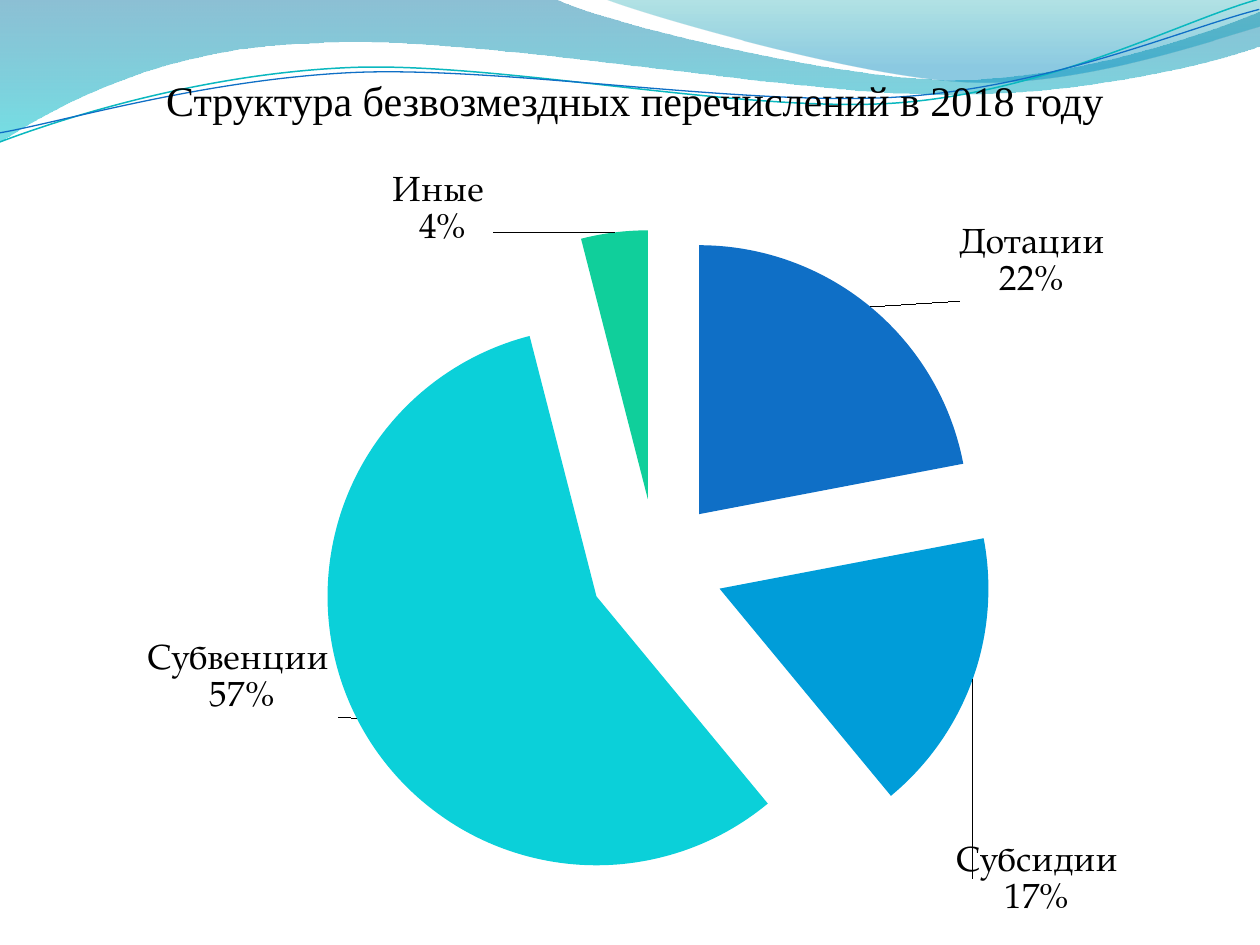
from math import cos, radians, sin

from lxml.etree import SubElement
from pptx import Presentation
from pptx.chart.data import CategoryChartData
from pptx.dml.color import RGBColor
from pptx.enum.chart import XL_CHART_TYPE
from pptx.enum.text import MSO_ANCHOR, PP_ALIGN
from pptx.oxml import parse_xml
from pptx.oxml.ns import nsdecls, qn
from pptx.util import Cm, Pt

TITLE = "Структура безвозмездных перечислений в 2018 году"

# Name, percent, colour, label shift as a fraction of the chart
SLICES = [
    ("Дотации", 22, "0F6FC6", (0.07, 0)),
    ("Субсидии", 17, "009DD9", (-0.02, 0.25)),
    ("Субвенции ", 57, "0BD0D9", (-0.01, -0.1)),
    ("Иные ", 4, "10CF9B", (-0.1, 0.03)),
]

# Outlines in cm: a pair is a straight step, six numbers are a Bezier step
WIDE_WAVE = [
    (0, 0), (11.18, -0.03),
    (12.09, 0.43, 16.87, 1.6, 19.25, 1.6),
    (21.67, 1.6, 24.33, 0.66, 25.4, 0.23),
    (25.43, 0.91),
    (24.97, 1.12, 22.1, 1.93, 18.95, 1.9),
    (15.8, 1.9, 9.7, 0.71, 6.53, 0.86),
    (3.28, 0.91, 1.17, 2.11, -0.03, 2.87),
    (0, 0),
]
RIGHT_WAVE = [
    (12.17, -0.03),
    (12.93, 0.28, 17.32, 1.57, 19.53, 1.65),
    (21.74, 1.75, 24.41, 0.81, 25.4, 0.53),
    (25.4, 0), (12.17, -0.03),
]
TEAL_LINE = [
    (0, 2.82),
    (1.22, 2.36, 4.01, 1.45, 7.04, 1.32),
    (10.03, 1.19, 15.06, 2.26, 18.11, 2.03),
    (21.16, 1.8, 23.83, 0.38, 25.35, -0.05),
]
BLUE_LINE = [
    (0, 2.64),
    (1.19, 2.44, 4.17, 1.55, 7.19, 1.42),
    (10.24, 1.3, 15.16, 2.13, 18.21, 1.91),
    (21.23, 1.7, 23.9, 0.53, 25.4, 0.15),
]


def rgb(value):
    return RGBColor.from_string(value)


def pairs(step):
    return list(zip(step[::2], step[1::2]))


def turn(outline, angle, cx, cy):
    """Turn every point of an outline clockwise about a centre."""
    c, s = cos(radians(angle)), sin(radians(angle))
    return [tuple(v for x, y in pairs(step)
                  for v in (cx + (x - cx) * c - (y - cy) * s,
                            cy + (x - cx) * s + (y - cy) * c))
            for step in outline]


class SlideBuilder:
    title_font = "Times New Roman"
    chart_font = "TeX Gyre Pagella"
    text_color = "000000"
    tilt = 2.7

    def __init__(self, prs):
        self.s = prs.slides.add_slide(prs.slide_layouts[6])

    def outline(self, outline, close):
        ends = [(Cm(x), Cm(y)) for *_, x, y in outline]
        builder = self.s.shapes.build_freeform(*ends[0])
        builder.add_line_segments(ends[1:], close=close)
        sp = builder.convert_to_shape()
        sp.shadow.inherit = False
        for line, step in zip(list(sp._element.iter(qn("a:lnTo"))), outline[1:]):
            if len(step) == 6:
                line.addprevious(self.bezier(step, sp.left, sp.top))
                line.getparent().remove(line)
        return sp

    def bezier(self, step, left, top):
        points = "".join(f'<a:pt x="{Cm(x) - left}" y="{Cm(y) - top}"/>'
                         for x, y in pairs(step))
        return parse_xml(f'<a:cubicBezTo {nsdecls("a")}>{points}</a:cubicBezTo>')

    def wave(self, outline, stops):
        """Add an area with a downward gradient; a stop is position, colour, opacity %."""
        sp = self.outline(outline, True)
        sp.line.fill.background()
        sp.fill.gradient()
        sp.fill.gradient_angle = 270
        for stop, (position, color, opacity) in zip(sp.fill.gradient_stops, stops):
            stop.position = position
            stop.color.rgb = rgb(color)
        colors = sp._element.spPr.iter(qn("a:srgbClr"))
        for element, (_, _, opacity) in zip(colors, stops):
            SubElement(element, qn("a:alpha"), val=str(opacity * 1000))

    def curve(self, outline, cx, cy, color, width):
        """Add a line that is laid out level and then tilted about its centre."""
        sp = self.outline(turn(outline, self.tilt, cx, cy), False)
        sp.rotation = 360 - self.tilt
        sp.left, sp.top = Cm(cx) - sp.width // 2, Cm(cy) - sp.height // 2
        sp.fill.background()
        sp.line.color.rgb = rgb(color)
        sp.line.width = Pt(width)

    def title(self, text, x, y, w, h):
        tf = self.s.shapes.add_textbox(Cm(x), Cm(y), Cm(w), Cm(h)).text_frame
        tf.word_wrap = True
        tf.vertical_anchor = MSO_ANCHOR.BOTTOM
        tf.margin_left = tf.margin_right = tf.margin_bottom = 0
        tf.text = text
        p = tf.paragraphs[0]
        p.alignment = PP_ALIGN.CENTER
        r = p.runs[0]
        r.font.name, r.font.size = self.title_font, Pt(24)
        r.font.color.rgb = rgb(self.text_color)

    def pie(self, slices, x, y, w, h):
        data = CategoryChartData(number_format="#,##0.0")
        data.categories = [name for name, *_ in slices]
        data.add_series("Series 1", [value for _, value, *_ in slices])
        chart = self.s.shapes.add_chart(
            XL_CHART_TYPE.PIE, Cm(x), Cm(y), Cm(w), Cm(h), data).chart
        chart.has_title = chart.has_legend = False
        chart.font.name, chart.font.size = self.chart_font, Pt(20)
        chart.font.color.rgb = rgb(self.text_color)
        plot = chart.plots[0]
        plot.vary_by_categories = True
        series = plot.series[0]
        for i, (_, _, color, _) in enumerate(slices):
            fill = series.points[i].format.fill
            fill.solid()
            fill.fore_color.rgb = rgb(color)
        explosion = parse_xml(f'<c:explosion {nsdecls("c")} val="25"/>')
        series._element.find(qn("c:dPt")).addprevious(explosion)
        labels = self.pie_labels([shift for *_, shift in slices])
        series._element.find(qn("c:cat")).addprevious(labels)
        self.place_plot(chart, 0.23, 0.12, 0.56, 0.86)

    def pie_labels(self, shifts):
        """Return name and percent labels, each moved by its own shift."""
        show = ('<c:showLegendKey val="0"/><c:showVal val="0"/><c:showCatName val="1"/>'
                '<c:showSerName val="0"/><c:showPercent val="1"/><c:showBubbleSize val="0"/>'
                '<c:separator>\n</c:separator>')
        style = ('<c:numFmt formatCode="0%" sourceLinked="0"/>'
                 '<c:spPr><a:noFill/><a:ln><a:noFill/></a:ln></c:spPr>')
        points = "".join(
            f'<c:dLbl><c:idx val="{i}"/><c:layout><c:manualLayout>'
            f'<c:x val="{dx}"/><c:y val="{dy}"/></c:manualLayout></c:layout>'
            f'{style}<c:dLblPos val="bestFit"/>{show}</c:dLbl>'
            for i, (dx, dy) in enumerate(shifts))
        return parse_xml(
            f'<c:dLbls {nsdecls("c", "a")}>{points}{style}'
            f'<c:dLblPos val="outEnd"/>{show}<c:showLeaderLines val="1"/></c:dLbls>')

    def place_plot(self, chart, x, y, w, h):
        """Fix the inner plot area, in fractions of the chart."""
        area = chart._chartSpace.chart.plotArea
        for old in area.findall(qn("c:layout")):
            area.remove(old)
        sizes = "".join(f'<c:{key} val="{value}"/>'
                        for key, value in zip("xywh", (x, y, w, h)))
        area.insert(0, parse_xml(
            f'<c:layout {nsdecls("c")}><c:manualLayout><c:layoutTarget val="inner"/>'
            f'<c:xMode val="edge"/><c:yMode val="edge"/>{sizes}</c:manualLayout></c:layout>'))


def main():
    prs = Presentation()
    prs.slide_width, prs.slide_height = Cm(25.4), Cm(19.05)
    slide = SlideBuilder(prs)
    slide.wave(WIDE_WAVE, [(0, "0074A1", 45), (1, "00C6CF", 55)])
    slide.wave(RIGHT_WAVE, [(0, "00A1A9", 30), (0.8, "008BBF", 45)])
    slide.curve(TEAL_LINE, 12.67, 1.46, "0AB8BF", 0.85)
    slide.curve(BLUE_LINE, 12.69, 1.5, "0F6FC6", 0.75)
    slide.title(TITLE, 1.27, 1.12, 23.06, 1.4)
    slide.pie(SLICES, 0.89, 2.72, 24.2, 15.8)
    prs.save("out.pptx")


if __name__ == "__main__":
    main()
